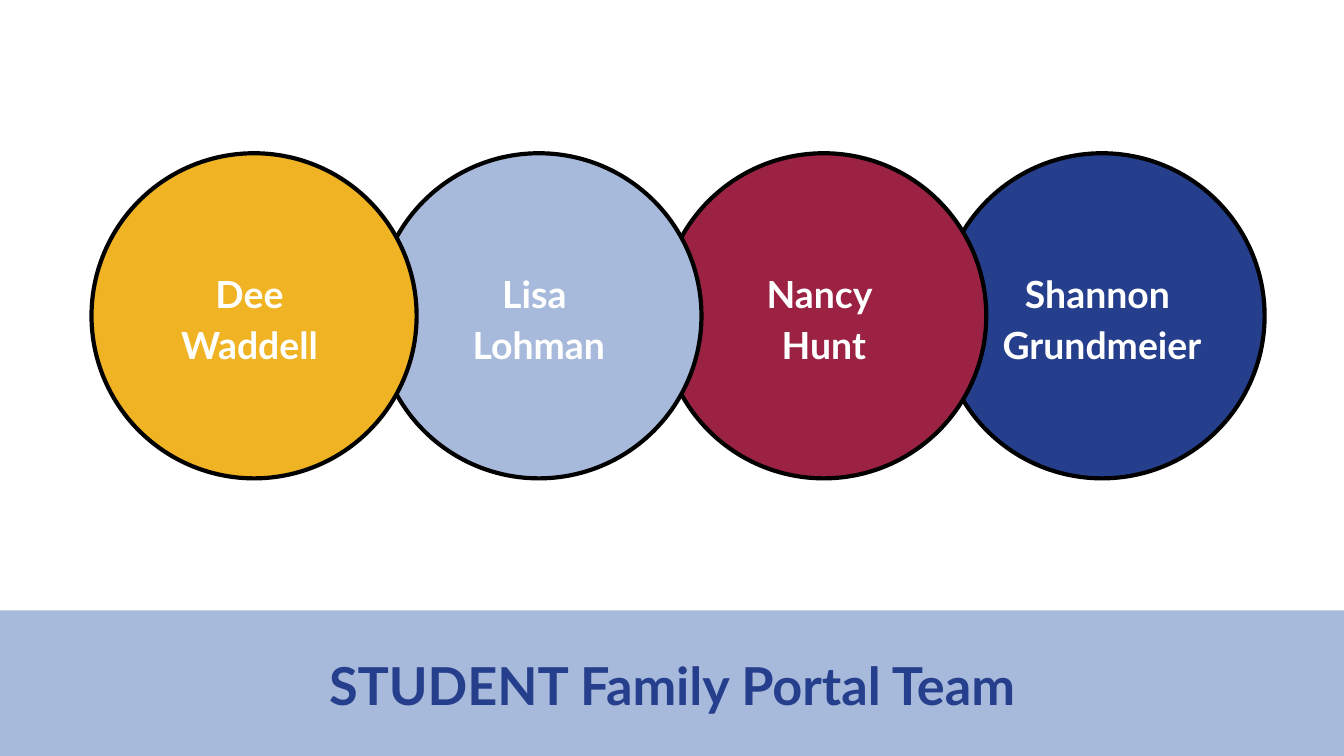
from pptx import Presentation
from pptx.dml.color import RGBColor
from pptx.enum.shapes import MSO_SHAPE
from pptx.enum.text import MSO_ANCHOR, PP_ALIGN
from pptx.util import Pt

WHITE = RGBColor(0xFF, 0xFF, 0xFF)
BLACK = RGBColor(0x00, 0x00, 0x00)
NAVY = RGBColor(0x26, 0x3F, 0x8C)
CRIMSON = RGBColor(0x9B, 0x22, 0x42)
LIGHT_BLUE = RGBColor(0xA8, 0xBA, 0xDB)
GOLD = RGBColor(0xF0, 0xB3, 0x23)

WIDTH, HEIGHT = 720, 405
BAND_TOP = 327
DIAMETER = 174.2
CIRCLE_TOP = 82.1
LABEL_HEIGHT = 49
LABEL_TOP = CIRCLE_TOP + (DIAMETER - LABEL_HEIGHT) / 2

TEAM = [
    (49, GOLD, ["Dee ", "Waddell "]),
    (201.6, LIGHT_BLUE, ["Lisa ", "Lohman"]),
    (354.2, CRIMSON, ["Nancy ", "Hunt"]),
    (503.3, NAVY, ["Shannon ", "Grundmeier"]),
]


def apply(target, values):
    for name, value in values.items():
        setattr(target, name, value)


class SlideBuilder:
    font = {"name": "Lato", "bold": True}
    frame = {"word_wrap": True}
    frame.update({f"margin_{side}": Pt(7.2)
                  for side in ("left", "top", "right", "bottom")})

    def __init__(self, page):
        self.page = page

    def shape(self, kind, left, top, width, height, fill, outline=None):
        shape = self.page.shapes.add_shape(
            kind, Pt(left), Pt(top), Pt(width), Pt(height))
        shape.shadow.inherit = False
        shape.fill.solid()
        shape.fill.fore_color.rgb = fill
        if outline is None:
            shape.line.fill.background()
        else:
            shape.line.color.rgb = outline
            shape.line.width = Pt(2.25)

    def text(self, left, top, width, height, lines, size, color, anchor, spacing):
        box = self.page.shapes.add_textbox(
            Pt(left), Pt(top), Pt(width), Pt(height))
        frame = box.text_frame
        apply(frame, {**self.frame, "vertical_anchor": anchor})
        for index, line in enumerate(lines):
            para = frame.add_paragraph() if index else frame.paragraphs[0]
            apply(para, {"alignment": PP_ALIGN.CENTER, "line_spacing": spacing})
            span = para.add_run()
            span.text = line
            apply(span.font, {**self.font, "size": Pt(size)})
            span.font.color.rgb = color

    def member(self, left, fill, names):
        self.shape(MSO_SHAPE.OVAL, left, CIRCLE_TOP, DIAMETER, DIAMETER,
                   fill, BLACK)
        self.text(left, LABEL_TOP, DIAMETER, LABEL_HEIGHT, names, 20, WHITE,
                  MSO_ANCHOR.MIDDLE, 1.15)


def main():
    deck = Presentation()
    apply(deck, {"slide_width": Pt(WIDTH), "slide_height": Pt(HEIGHT)})
    builder = SlideBuilder(deck.slides.add_slide(deck.slide_layouts[6]))
    builder.shape(MSO_SHAPE.RECTANGLE, 0, BAND_TOP, WIDTH, HEIGHT - BAND_TOP,
                  LIGHT_BLUE)
    for left, fill, names in reversed(TEAM):
        builder.member(left, fill, names)
    builder.text(24.5, 343, 671, 45.4, ["STUDENT Family Portal Team"], 28,
                 NAVY, MSO_ANCHOR.TOP, 1.0)
    deck.save("out.pptx")


if __name__ == "__main__":
    main()
